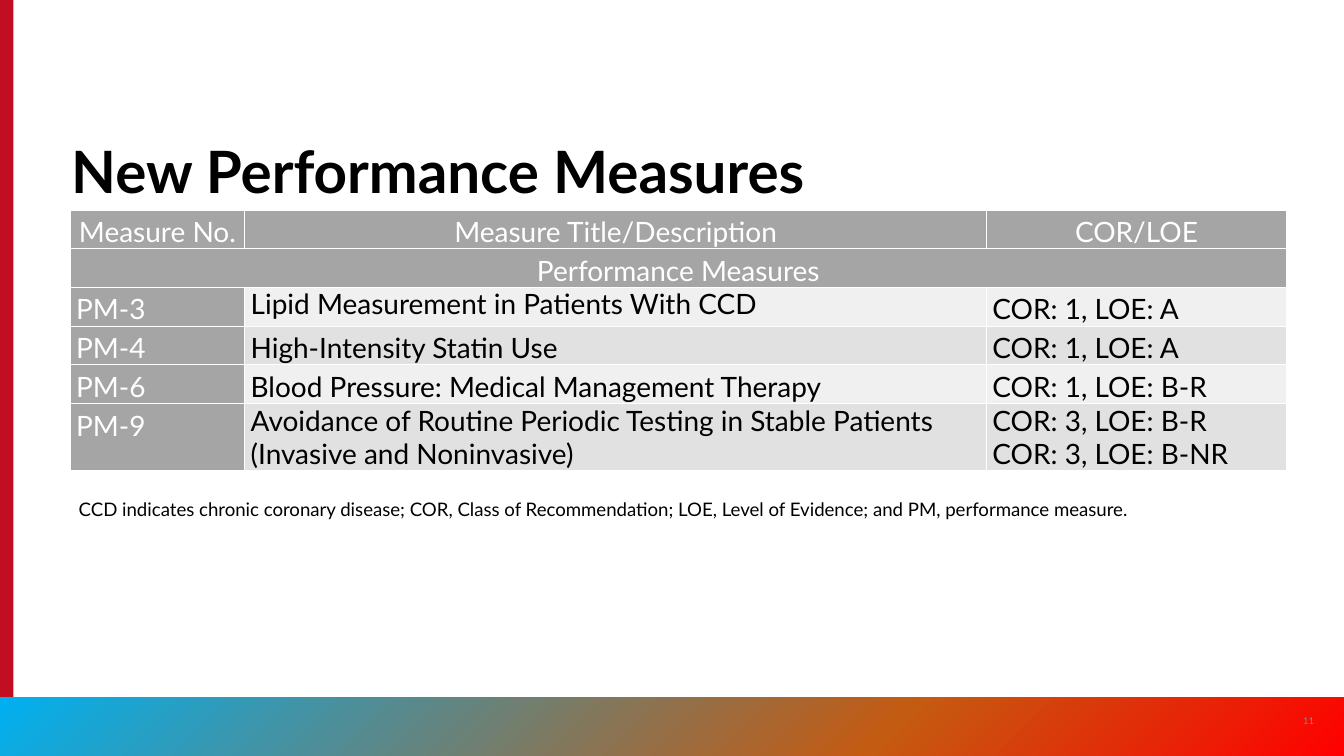
from dataclasses import dataclass

from lxml import etree
from pptx import Presentation, util as u
from pptx.dml.color import RGBColor
from pptx.enum import shapes, text
from pptx.oxml import parse_xml

NS = "http://schemas.openxmlformats.org/drawingml/2006/main"
LEFT, MID = text.PP_ALIGN.LEFT, text.PP_ALIGN.CENTER


@dataclass(frozen=True)
class Theme:
    font: str = "Lato"
    black: str = "000000"
    white: str = "FFFFFF"
    red: str = "C10E21"
    head: str = "A5A5A5"
    odd: str = "F0F0F0"
    even: str = "E1E1E1"
    number: str = "8A8B8A"
    ramp: tuple = ((0, "00B0F0"), (66, "C55A11"), (100, "FF0000"))
    title: int = 50
    body: int = 24
    note: int = 16
    small: int = 8


def write(frame, words, size, color, bold=False, align=LEFT, space=1.0,
          anchor=None):
    """Fill a text frame, one paragraph for each line of words."""
    frame.word_wrap = True
    if anchor is not None:
        frame.vertical_anchor = anchor
    frame.text = words
    for para in frame.paragraphs:
        para.alignment, para.line_spacing = align, space
        font = para.runs[0].font
        font.name, font.size, font.bold = Theme.font, u.Pt(size), bold
        font.color.rgb = RGBColor.from_string(color)


class Page:
    def __init__(self, deck, theme):
        self.theme = theme
        self.slide = deck.slides.add_slide(deck.slide_layouts[5])
        self.shapes = self.slide.shapes

    def title(self, words, box):
        shape = self.shapes.title
        shape.left, shape.top, shape.width, shape.height = map(u.Cm, box)
        write(shape.text_frame, words, self.theme.title, self.theme.black,
              bold=True, space=0.9, anchor=text.MSO_ANCHOR.BOTTOM)

    def label(self, words, box, **form):
        shape = self.shapes.add_textbox(*map(u.Cm, box))
        write(shape.text_frame, words, **form)

    def bar(self, box, color):
        shape = self.shapes.add_shape(
            shapes.MSO_SHAPE.RECTANGLE, *map(u.Cm, box))
        shape.shadow.inherit = False
        shape.line.fill.background()
        shape.fill.solid()
        shape.fill.fore_color.rgb = RGBColor.from_string(color)
        return shape

    def blend(self, box, stops):
        """Draw a bar with a diagonal gradient."""
        shape = self.bar(box, stops[0][1])
        marks = "".join(
            f'<a:gs pos="{at * 1000}"><a:srgbClr val="{color}"/></a:gs>'
            for at, color in stops)
        solid = shape.fill._xPr.find(f"{{{NS}}}solidFill")
        solid.getparent().replace(solid, parse_xml(
            f'<a:gradFill xmlns:a="{NS}" rotWithShape="1"><a:gsLst>{marks}'
            '</a:gsLst><a:lin ang="2700000" scaled="0"/></a:gradFill>'))

    def edge(self, cell):
        """Give a cell thin white borders; call before its fill is set."""
        props = cell._tc.get_or_add_tcPr()
        for side in "LRTB":
            line = etree.SubElement(
                props, f"{{{NS}}}ln{side}", w=str(u.Pt(1)))
            fill = etree.SubElement(line, f"{{{NS}}}solidFill")
            etree.SubElement(fill, f"{{{NS}}}srgbClr", val=self.theme.white)

    def table(self, data, spot, cols, rows, tight):
        """Cells in tight have single line spacing."""
        look = self.theme
        size = sum(cols), sum(rows)
        grid = self.shapes.add_table(
            len(rows), len(cols), *map(u.Cm, (*spot, *size))).table
        for col, width in zip(grid.columns, cols):
            col.width = u.Cm(width)
        for row, height in zip(grid.rows, rows):
            row.height = u.Cm(height)
        for r, line in enumerate(data):
            for c in range(len(cols)):
                cell = grid.cell(r, c)
                self.edge(cell)
                cell.margin_left = cell.margin_right = u.Cm(0.18)
                cell.margin_top = cell.margin_bottom = 0
                head = r < 2 or c == 0
                tone = look.head if head else (look.odd, look.even)[r % 2]
                cell.fill.solid()
                cell.fill.fore_color.rgb = RGBColor.from_string(tone)
                if c < len(line):
                    write(cell.text_frame, line[c], look.body,
                          look.white if head else look.black,
                          align=MID if r < 2 else LEFT,
                          space=1.0 if (r, c) in tight else 1.15)
            if len(line) == 1:
                grid.cell(r, 0).merge(grid.cell(r, len(cols) - 1))


MEASURES = [
    ("Measure No.", "Measure Title/Description", "COR/LOE"),
    ("Performance Measures",),
    ("PM-3", "Lipid Measurement in Patients With CCD", "COR: 1, LOE: A"),
    ("PM-4", "High-Intensity Statin Use", "COR: 1, LOE: A"),
    ("PM-6", "Blood Pressure: Medical Management Therapy",
     "COR: 1, LOE: B-R"),
    ("PM-9", "Avoidance of Routine Periodic Testing in Stable Patients "
     "(Invasive and Noninvasive)", "COR: 3, LOE: B-R\nCOR: 3, LOE: B-NR"),
]


def main():
    deck = Presentation()
    deck.slide_width, deck.slide_height = u.Cm(40.64), u.Cm(22.86)
    look = Theme()
    page = Page(deck, look)
    page.bar((0, 0, 0.41, 22.86), look.red)
    page.blend((0, 21.08, 40.64, 1.78), look.ramp)
    page.title("New Performance Measures", (1.9, 3.81, 35.76, 2.54))
    page.label("11", (38.96, 21.18, 1.22, 1.22), size=look.small,
               color=look.number, align=MID, anchor=text.MSO_ANCHOR.MIDDLE)
    page.table(MEASURES, (2.12, 6.35), cols=(5.28, 22.43, 9.07),
               rows=[1.17] * 5 + [2.03], tight={(2, 1), (5, 1), (5, 2)})
    page.label("CCD indicates chronic coronary disease; COR, Class of "
               "Recommendation; LOE, Level of Evidence; and PM, "
               "performance measure.", (2.13, 14.94, 36.8, 0.94),
               size=look.note, color=look.black)
    deck.save("out.pptx")


if __name__ == "__main__":
    main()
